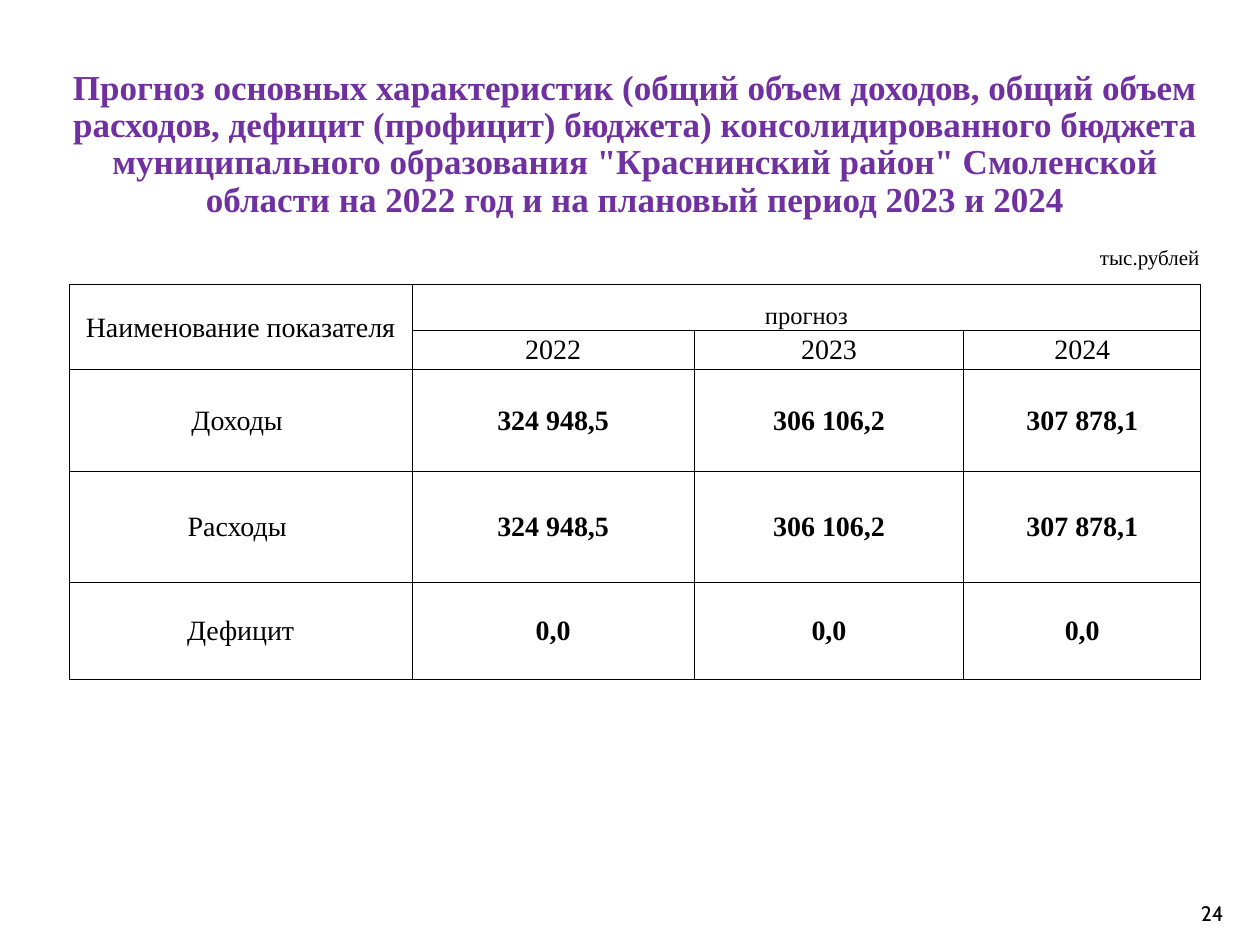
from pptx import Presentation
from pptx import util as u
from pptx.dml import color
from pptx.enum import text
from pptx.oxml import ns
from lxml import etree

COLORS = {"ink": "000000", "title": "7030A0"}
SERIF = "Times New Roman"
PLAIN = "{2D5ABB26-0587-4C30-8999-92F81FD0307C}"
COLS = [2.72, 2.24, 2.14, 1.88]
ROWS = [1.4, 0.31, 0.36, 0.31, 0.81, 0.88, 0.77]
TITLE = (
    "Прогноз основных характеристик (общий объем доходов, общий объем "
    "расходов, дефицит (профицит) бюджета) консолидированного бюджета "
    'муниципального образования "Краснинский район" Смоленской области '
    "на 2022 год и на плановый период 2023 и 2024"
)
DATA = [
    [TITLE, "", "", ""],
    ["", "", "", "тыс.рублей"],
    ["Наименование показателя", "прогноз", "", ""],
    ["", "2022", "2023", "2024"],
    ["Доходы ", "324 948,5", "306 106,2", "307 878,1"],
    ["Расходы ", "324 948,5", "306 106,2", "307 878,1"],
    ["Дефицит", "0,0", "0,0", "0,0"],
]
MERGES = [(0, 0, 0, 3), (2, 0, 3, 0), (2, 1, 2, 3)]
BASE = {"size": 16, "bold": False, "name": SERIF, "ink": "ink",
        "align": text.PP_ALIGN.CENTER, "anchor": text.MSO_ANCHOR.MIDDLE}
STYLES = {
    (0, 0): {"size": 20, "bold": True, "ink": "title", "space": 0.96,
             "anchor": text.MSO_ANCHOR.TOP},
    (1, 3): {"size": 12, "align": text.PP_ALIGN.RIGHT,
             "anchor": text.MSO_ANCHOR.TOP},
    (2, 1): {"size": 14, "anchor": text.MSO_ANCHOR.BOTTOM},
}


def put(para, words, fmt):
    para.alignment = fmt["align"]
    para.line_spacing = fmt.get("space")
    run = para.add_run()
    run.text = words
    for key, value in {"size": u.Pt(fmt["size"]), "bold": fmt["bold"],
                       "name": fmt["name"]}.items():
        setattr(run.font, key, value)
    run.font.color.rgb = color.RGBColor.from_string(COLORS[fmt["ink"]])


def rule(cell, sides):
    props = cell._tc.get_or_add_tcPr()
    for side in "LRTB":
        line = etree.SubElement(props, ns.qn("a:ln" + side), w=str(u.Pt(0.5)))
        if side in sides:
            fill = etree.SubElement(line, ns.qn("a:solidFill"))
            etree.SubElement(fill, ns.qn("a:srgbClr"), val=COLORS["ink"])
        else:
            etree.SubElement(line, ns.qn("a:noFill"))


def fill_cell(cell, row, col):
    fmt = {**BASE, **STYLES.get((row, col), {})}
    if row > 3 and col:
        fmt["bold"] = True
    edge = u.Inches(0.01)
    for key, value in {"margin_left": edge, "margin_right": edge,
                       "margin_top": edge, "margin_bottom": 0,
                       "vertical_anchor": fmt["anchor"]}.items():
        setattr(cell, key, value)
    if DATA[row][col]:
        put(cell.text_frame.paragraphs[0], DATA[row][col], fmt)
    rule(cell, ["", "B"][row] if row < 2 else "LRTB")
    cell.fill.background()


def add_grid(slide):
    frame = slide.shapes.add_table(
        len(ROWS), len(COLS), u.Inches(0.55), u.Inches(0.55),
        u.Inches(sum(COLS)), u.Inches(sum(ROWS)))
    grid = frame.table
    grid.first_row = grid.horz_banding = False
    grid._tbl.tblPr.find(ns.qn("a:tableStyleId")).text = PLAIN
    for col, width in zip(grid.columns, COLS):
        col.width = u.Inches(width)
    for row, height in zip(grid.rows, ROWS):
        row.height = u.Inches(height)
    for top, left, low, right in MERGES:
        grid.cell(top, left).merge(grid.cell(low, right))
    for row in range(len(ROWS)):
        for col in range(len(COLS)):
            fill_cell(grid.cell(row, col), row, col)


def add_page(slide):
    box = slide.shapes.add_textbox(*map(u.Inches, (8.98, 7.11, 0.83, 0.27)))
    frame = box.text_frame
    frame.word_wrap = True
    frame.vertical_anchor = text.MSO_ANCHOR.MIDDLE
    put(frame.paragraphs[0], "24", {**BASE, "size": 12, "name": "Cabin",
                                    "align": text.PP_ALIGN.RIGHT})


def main():
    deck = Presentation()
    deck.slide_width, deck.slide_height = u.Inches(10), u.Inches(7.5)
    slide = deck.slides.add_slide(deck.slide_layouts[6])
    add_page(slide)
    add_grid(slide)
    deck.save("out.pptx")


if __name__ == "__main__":
    main()
